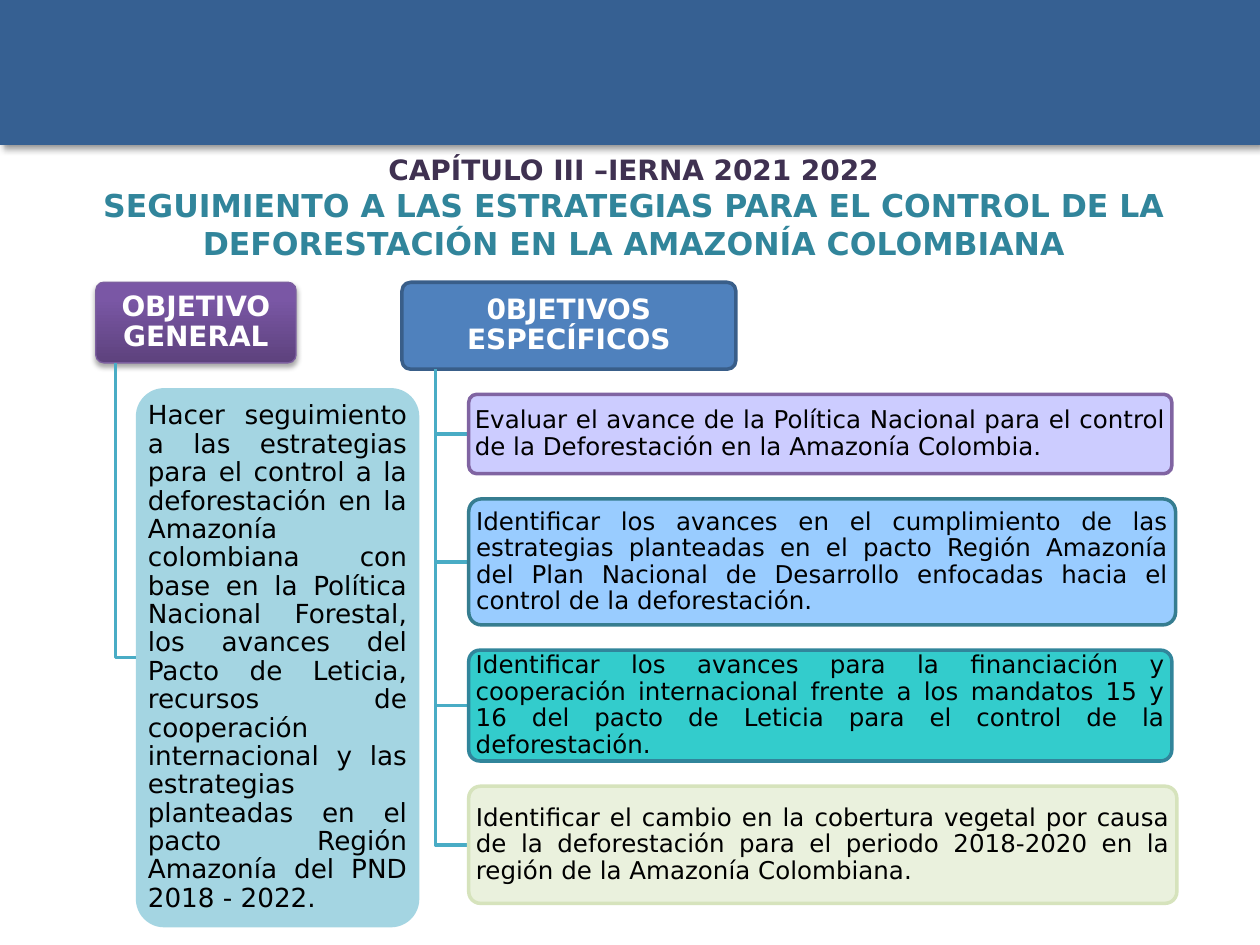
from lxml import etree
from pptx import Presentation
from pptx import util as u
from pptx.dml.color import RGBColor
from pptx.enum import shapes, text
from pptx.oxml.ns import qn

FONT = "DejaVu Sans"
COLORS = {
    "band": "366092", "chapter": "3F3151", "heading": "31859B",
    "white": "FFFFFF", "black": "000000", "branch": "49ACC5",
    "purple_dark": "5D427D", "purple": "7A57A5", "purple_line": "7C5F9F",
    "blue": "4F81BD", "blue_line": "395E89", "aqua": "4BACC6",
    "lilac": "CCCCFF", "lilac_line": "8064A2",
    "sky": "99CCFF", "sky_line": "367D90",
    "teal": "33CCCC", "teal_line": "31859B",
    "cream": "EAF1DD", "cream_line": "D6E3BC",
}
TITLE = [
    ("CAPÍTULO III –IERNA 2021 2022", 16, "chapter"),
    ("SEGUIMIENTO A LAS ESTRATEGIAS PARA EL CONTROL DE LA DEFORESTACIÓN "
     "EN LA AMAZONÍA COLOMBIANA", 18, "heading"),
]
BRANCHES = [
    {
        "label": "OBJETIVO GENERAL", "at": (0.76, 2.24, 1.59, 0.64),
        "fill": ("purple_dark", "purple"), "line": ("purple_line", 0.75),
        "shadow": (35, 3.1, 1.8, 90), "size": 15,
        "items": [
            ("Hacer seguimiento a las estrategias para el control a la deforestación "
             "en la Amazonía colombiana con base en la Política Nacional Forestal, los "
             "avances del Pacto de Leticia, recursos de cooperación internacional y las "
             "estrategias planteadas en el pacto Región Amazonía del PND 2018 - 2022.",
             2.25, 4.28, "aqua", None, 50),
        ],
    },
    {
        "label": "0BJETIVOS ESPECÍFICOS", "at": (3.19, 2.24, 2.65, 0.69),
        "fill": ("blue",), "line": ("blue_line", 2), "shadow": None, "size": 14,
        "items": [
            ("Evaluar el avance de la Política Nacional para el control de la "
             "Deforestación en la Amazonía Colombia.",
             5.58, 0.63, "lilac", ("lilac_line", 2), 100),
            ("Identificar los avances en el cumplimiento de las estrategias planteadas "
             "en el pacto Región Amazonía del Plan Nacional de Desarrollo enfocadas "
             "hacia el control de la deforestación.",
             5.61, 1.0, "sky", ("sky_line", 2), 100),
            ("Identificar los avances para la financiación y cooperación internacional "
             "frente a los mandatos 15 y 16 del pacto de Leticia para el control de la "
             "deforestación.",
             5.58, 0.88, "teal", ("teal_line", 2), 100),
            ("Identificar el cambio en la cobertura vegetal por causa de la "
             "deforestación para el periodo 2018-2020 en la región de la Amazonía "
             "Colombiana.",
             5.62, 0.93, "cream", ("cream_line", 2), 100),
        ],
    },
]
GAP = 0.2
TRUNK = 0.1
INDENT = 0.2


def color(name):
    return RGBColor.from_string(COLORS[name])


def set_all(target, values):
    for name, value in values.items():
        setattr(target, name, value)


def set_outline(shape, line):
    if line:
        shape.line.color.rgb = color(line[0])
        shape.line.width = u.Pt(line[1])
    else:
        shape.line.fill.background()


def set_shadow(shape, shadow):
    shape.shadow.inherit = False
    if not shadow:
        return
    opacity, blur, distance, angle = shadow
    effects = shape._element.spPr.find(qn("a:effectLst"))
    outer = etree.SubElement(
        effects, qn("a:outerShdw"), blurRad=str(u.Pt(blur)), dist=str(u.Pt(distance)),
        dir=str(angle * 60000), algn="t", rotWithShape="0")
    tone = etree.SubElement(outer, qn("a:srgbClr"), val=COLORS["black"])
    etree.SubElement(tone, qn("a:alpha"), val=str(opacity * 1000))


def add_block(page, kind, at, fills, line=None, shadow=None, opacity=100):
    shape = page.shapes.add_shape(kind, *map(u.Inches, at))
    if len(fills) == 2:
        shape.fill.gradient()
        shape.fill.gradient_angle = 90
        for stop, name, position in zip(shape.fill.gradient_stops, fills, (0, 0.8)):
            stop.color.rgb = color(name)
            stop.position = position
    else:
        shape.fill.solid()
        shape.fill.fore_color.rgb = color(fills[0])
    if opacity < 100:
        tone = shape._element.spPr.find(qn("a:solidFill"))[0]
        etree.SubElement(tone, qn("a:alpha"), val=str(opacity * 1000))
    set_outline(shape, line)
    set_shadow(shape, shadow)
    return shape


def write(paragraph, words, size, tone, bold, align):
    paragraph.alignment = align
    span = paragraph.add_run()
    span.text = words
    set_all(span.font, {"name": FONT, "size": u.Pt(size), "bold": bold})
    span.font.color.rgb = color(tone)


def add_card(page, at, words, size, tone, bold, align, **style):
    box = add_block(page, shapes.MSO_SHAPE.ROUNDED_RECTANGLE, at, **style)
    box.adjustments[0] = 0.1
    set_all(box.text_frame, {
        "word_wrap": True, "vertical_anchor": text.MSO_ANCHOR.MIDDLE,
        "margin_left": u.Inches(0.03), "margin_right": u.Inches(0.03),
        "margin_top": u.Inches(0.02), "margin_bottom": u.Inches(0.02)})
    paragraph = box.text_frame.paragraphs[0]
    paragraph.line_spacing = 0.9
    write(paragraph, words, size, tone, bold, align)


def add_elbow(page, x, top, end_x, end_y):
    builder = page.shapes.build_freeform(u.Inches(x), u.Inches(top))
    corners = [(x, end_y), (end_x, end_y)]
    builder.add_line_segments([tuple(map(u.Inches, spot)) for spot in corners], close=False)
    elbow = builder.convert_to_shape()
    elbow.fill.background()
    set_outline(elbow, ("branch", 2))
    set_shadow(elbow, None)


def add_title(page):
    title = page.shapes.title
    set_all(title, {"left": u.Inches(0.32), "top": u.Inches(1.16),
                    "width": u.Inches(9.42), "height": u.Inches(0.98)})
    frame = title.text_frame
    set_all(frame, {
        "word_wrap": True, "auto_size": text.MSO_AUTO_SIZE.NONE,
        "vertical_anchor": text.MSO_ANCHOR.TOP,
        "margin_left": u.Inches(0.1), "margin_right": u.Inches(0.1),
        "margin_top": u.Inches(0.05), "margin_bottom": u.Inches(0.05)})
    for index, (words, size, tone) in enumerate(TITLE):
        paragraph = frame.add_paragraph() if index else frame.paragraphs[0]
        write(paragraph, words, size, tone, True, text.PP_ALIGN.CENTER)


def add_branch(page, branch):
    left, top, width, height = branch["at"]
    add_card(page, branch["at"], branch["label"], 16, "white", True,
             text.PP_ALIGN.CENTER, fills=branch["fill"], line=branch["line"],
             shadow=branch["shadow"])
    bottom = top + height
    trunk = left + width * TRUNK
    item_left = left + width * INDENT
    item_top = bottom + GAP
    for words, item_width, item_height, fill, line, opacity in branch["items"]:
        add_elbow(page, trunk, bottom, item_left, item_top + item_height / 2)
        add_card(page, (item_left, item_top, item_width, item_height), words,
                 branch["size"], "black", False, text.PP_ALIGN.JUSTIFY,
                 fills=(fill,), line=line, opacity=opacity)
        item_top += item_height + GAP


def main():
    deck = Presentation()
    set_all(deck, {"slide_width": u.Inches(10), "slide_height": u.Inches(7.5)})
    page = deck.slides.add_slide(deck.slide_layouts[5])
    add_block(page, shapes.MSO_SHAPE.RECTANGLE, (0, 0, 10, 1.15), ("band",),
              shadow=(40, 4, 3, 45))
    add_title(page)
    for branch in BRANCHES:
        add_branch(page, branch)
    deck.save("out.pptx")


if __name__ == "__main__":
    main()
